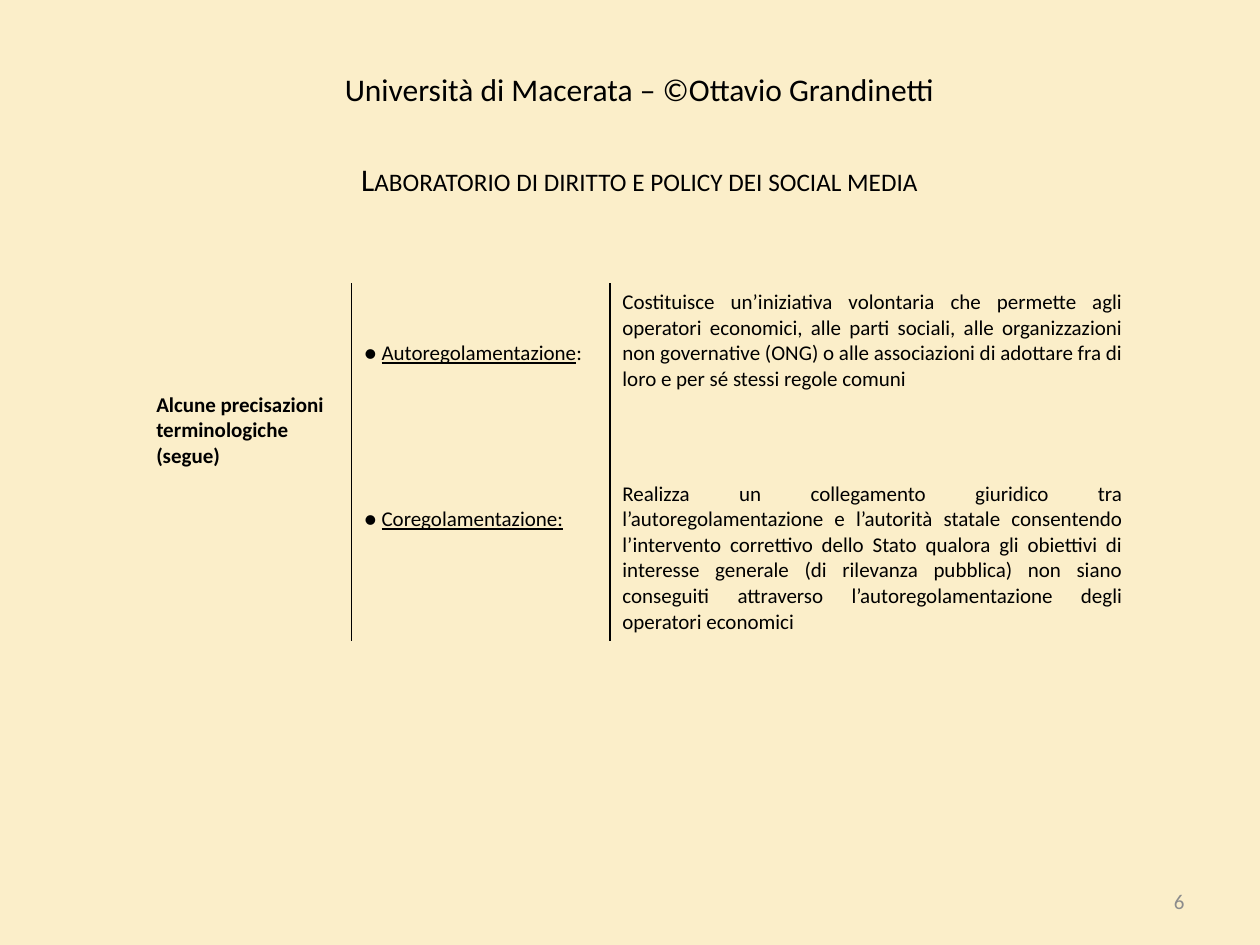
from lxml import etree
from pptx import Presentation
from pptx.dml.color import RGBColor
from pptx.enum.text import MSO_ANCHOR, PP_ALIGN
from pptx.oxml.ns import qn
from pptx.util import Inches, Pt

LEFT, CENTER, RIGHT, JUSTIFY = PP_ALIGN.LEFT, PP_ALIGN.CENTER, PP_ALIGN.RIGHT, PP_ALIGN.JUSTIFY
MIDDLE = MSO_ANCHOR.MIDDLE

CREAM = RGBColor(0xFB, 0xEE, 0xC9)
BLACK = RGBColor(0x00, 0x00, 0x00)
GREY = RGBColor(0x8C, 0x8C, 0x8C)

FONT = "Calibri"
NO_STYLE_NO_GRID = "{2D5ABB26-0587-4C30-8999-92F81FD0307C}"
PADDING = 0.05
BODY_LINE = 0.2033  # height of one 12 pt line, in inches
HEADING_LINE = 0.305  # height of one 18 pt line, in inches

COLUMN_WIDTHS = (1.65, 2.05, 4.17)
ROW_HEIGHTS = (0.41, 1.32, 1.11, 0.41, 1.32)
TOPIC_ROW, LAST_ROW = 2, 4

# Row, lines the term is lowered by, term, plain ending, definition
DEFINITIONS = (
    (2, 2, "Autoregolamentazione", ":",
     "Costituisce un’iniziativa volontaria che permette agli operatori economici, "
     "alle parti sociali, alle organizzazioni non governative (ONG) o alle "
     "associazioni di adottare fra di loro e per sé stessi regole comuni"),
    (4, 1, "Coregolamentazione:", "",
     "Realizza un collegamento giuridico tra l’autoregolamentazione e l’autorità "
     "statale consentendo l’intervento correttivo dello Stato qualora gli obiettivi "
     "di interesse generale (di rilevanza pubblica) non siano conseguiti attraverso "
     "l’autoregolamentazione degli operatori economici"),
)


def add_run(paragraph, text, size=12, color=BLACK, bold=False, underline=False):
    run = paragraph.add_run()
    run.text = text
    font = run.font
    font.name, font.size, font.bold, font.underline = FONT, Pt(size), bold, underline
    font.color.rgb = color
    return run


def start_cell(cell, align=LEFT, lowered=0):
    """Align the cell, lower its text by some inches and return its paragraph."""
    cell.margin_top = Inches(PADDING + lowered)
    paragraph = cell.text_frame.paragraphs[0]
    paragraph.alignment = align
    return paragraph


def add_border(cell, side):
    line = etree.Element(qn(f"a:{side}"), w=str(Pt(1)))
    fill = etree.SubElement(line, qn("a:solidFill"))
    etree.SubElement(fill, qn("a:srgbClr"), val=str(BLACK))
    cell._tc.get_or_add_tcPr().insert(0, line)


def add_grid(slide, left, top, width, height):
    """Add the unstyled table with its column and row sizes."""
    table = slide.shapes.add_table(
        len(ROW_HEIGHTS), len(COLUMN_WIDTHS), left, top, width, height).table
    table.first_row = table.horz_banding = False
    table._tbl.tblPr.find(qn("a:tableStyleId")).text = NO_STYLE_NO_GRID
    for column, column_width in zip(table.columns, COLUMN_WIDTHS):
        column.width = Inches(column_width)
    for row, row_height in zip(table.rows, ROW_HEIGHTS):
        row.height = Inches(row_height)
    for cell in table.iter_cells():
        cell.fill.background()
        cell.margin_bottom = Inches(PADDING)
    return table


def fill_headings(table):
    for row in (0, 1):
        table.cell(row, 0).merge(table.cell(row, 2))
    university = start_cell(table.cell(0, 0), CENTER)
    add_run(university, "Università di Macerata – ©Ottavio Grandinetti", 18)
    course = start_cell(table.cell(1, 0), CENTER, HEADING_LINE)
    title = add_run(course, "Laboratorio di diritto e policy dei social media", 18)
    title.font._element.set("cap", "small")


def fill_topic(table):
    topic = table.cell(TOPIC_ROW, 0)
    topic.merge(table.cell(LAST_ROW, 0))
    add_run(start_cell(topic, lowered=4 * BODY_LINE),
            "Alcune precisazioni terminologiche", bold=True)
    add_run(topic.text_frame.add_paragraph(), "(segue)", bold=True)
    # Vertical rule between the topic and its terms
    for row in range(TOPIC_ROW, LAST_ROW + 1):
        add_border(table.cell(row, 0), "lnR")
        add_border(table.cell(row, 1), "lnL")


def fill_definitions(table):
    for row, lines, term, ending, definition in DEFINITIONS:
        label = start_cell(table.cell(row, 1), lowered=lines * BODY_LINE)
        add_run(label, "● ")
        add_run(label, term, underline=True)
        if ending:
            add_run(label, ending)
        add_run(start_cell(table.cell(row, 2), JUSTIFY), definition)


def add_content_table(slide, left, top, width, height):
    table = add_grid(slide, left, top, width, height)
    fill_headings(table)
    fill_topic(table)
    fill_definitions(table)


def add_page_number(slide, left, top, width, height):
    frame = slide.shapes.add_textbox(left, top, width, height).text_frame
    frame.word_wrap = True
    frame.vertical_anchor = MIDDLE
    number = frame.paragraphs[0]
    number.alignment = RIGHT
    add_run(number, "6", color=GREY)


def main():
    prs = Presentation()
    prs.slide_width, prs.slide_height = Inches(10), Inches(7.5)
    slide = prs.slides.add_slide(prs.slide_layouts[6])
    background = slide.background.fill
    background.solid()
    background.fore_color.rgb = CREAM

    add_page_number(slide, Inches(7.17), Inches(6.95), Inches(2.33), Inches(0.4))
    add_content_table(slide, Inches(1.14), Inches(0.52),
                      Inches(sum(COLUMN_WIDTHS)), Inches(sum(ROW_HEIGHTS)))
    prs.save("out.pptx")


if __name__ == "__main__":
    main()
